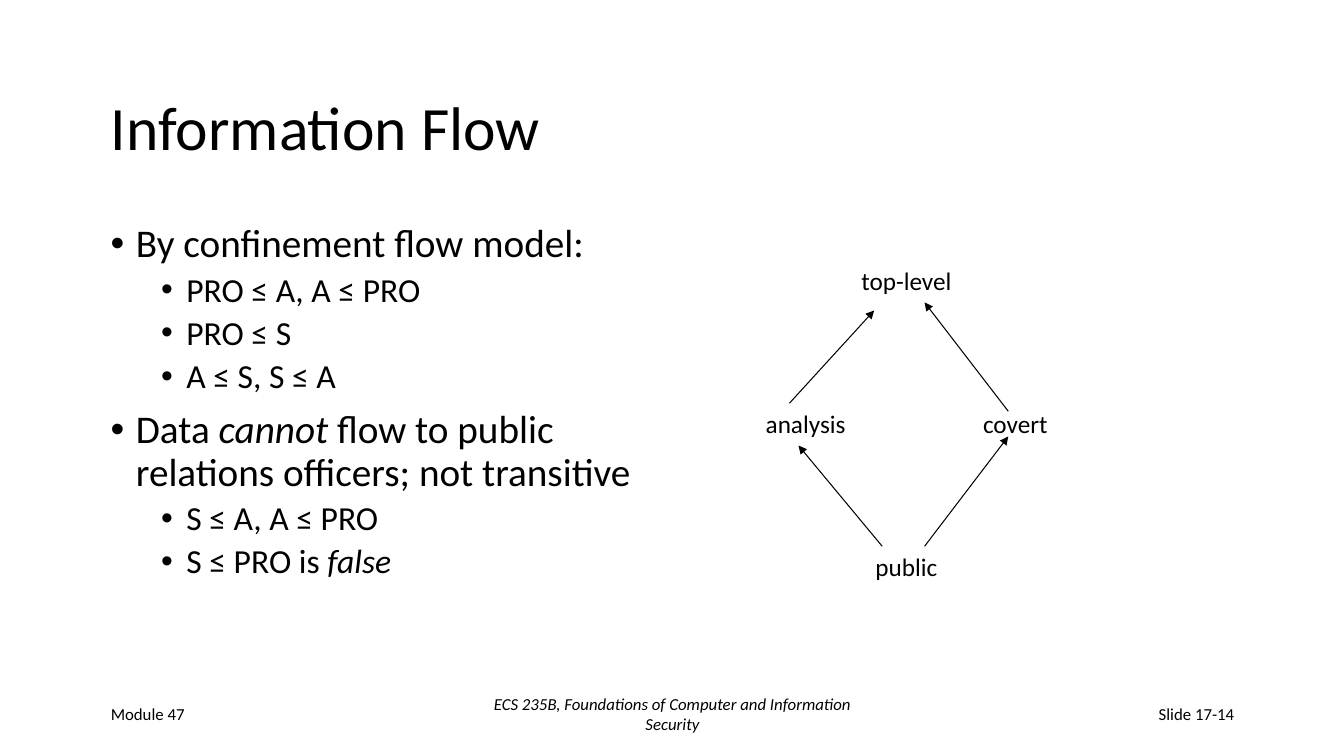
from dataclasses import dataclass

from lxml.etree import SubElement
from pptx import Presentation
from pptx.dml.color import RGBColor
from pptx.enum.shapes import MSO_CONNECTOR
from pptx.enum.text import MSO_ANCHOR, MSO_AUTO_SIZE, PP_ALIGN
from pptx.oxml.ns import qn
from pptx.slide import Slide
from pptx.text.text import TextFrame, _Paragraph
from pptx.util import Inches, Pt


@dataclass(frozen=True)
class Theme:
    font: str = "Calibri"
    ink: RGBColor = RGBColor(0, 0, 0)
    background: RGBColor = RGBColor(255, 255, 255)
    title: int = 44
    points: tuple[int, int] = (28, 24)
    node: int = 18
    footer: int = 12
    arrow: float = 0.75


@dataclass(frozen=True)
class Point:
    level: int
    text: str
    emphasis: str = ""
    rest: str = ""


@dataclass(frozen=True)
class Label:
    text: str
    left: float
    top: float
    width: float
    height: float
    size: int
    align: PP_ALIGN = PP_ALIGN.CENTER
    anchor: MSO_ANCHOR = MSO_ANCHOR.TOP
    italic: bool = False


@dataclass(frozen=True)
class Flow:
    start: tuple[float, float]
    end: tuple[float, float]


THEME = Theme()

POINTS = [
    Point(0, "By confinement flow model:"),
    Point(1, "PRO ≤ A, A ≤ PRO"),
    Point(1, "PRO ≤ S"),
    Point(1, "A ≤ S, S ≤ A"),
    Point(0, "Data ", "cannot", " flow to public relations officers; not transitive"),
    Point(1, "S ≤ A, A ≤ PRO"),
    Point(1, "S ≤ PRO is ", "false"),
]

NODES = [
    Label(name, left, top, 1.48, 0.4, THEME.node)
    for name, left, top in [
        ("top-level", 8.25, 2.58),
        ("analysis", 7.25, 4),
        ("covert", 9.33, 4),
        ("public", 8.25, 5.42),
    ]
]

FLOWS = [
    Flow((8.75, 5.42), (7.92, 4.42)),
    Flow((9.17, 5.42), (10, 4.33)),
    Flow((7.83, 4), (8.67, 3.08)),
    Flow((10, 4.08), (9.17, 3)),
]

FOOTERS = [
    Label(text, left, 6.83, width, 0.5, THEME.footer, align, MSO_ANCHOR.MIDDLE, italic)
    for text, left, width, align, italic in [
        ("Module 47", 1, 2.78, PP_ALIGN.LEFT, False),
        ("ECS 235B, Foundations of Computer and Information Security",
         4.56, 4.22, PP_ALIGN.CENTER, True),
        ("Slide 17-14", 9.56, 2.78, PP_ALIGN.RIGHT, False),
    ]
]


def format_runs(paragraph: _Paragraph, size: int, italic: bool = False) -> None:
    for run in paragraph.runs:
        run.font.name = THEME.font
        run.font.size = Pt(size)
        run.font.color.rgb = THEME.ink
        run.font.italic = italic


def add_frame(slide: Slide, left: float, top: float, width: float, height: float) -> TextFrame:
    frame = slide.shapes.add_textbox(
        Inches(left), Inches(top), Inches(width), Inches(height)
    ).text_frame
    frame.word_wrap = True
    return frame


def set_title(slide: Slide, text: str) -> None:
    title = slide.shapes.title
    title.left, title.top = Inches(1), Inches(0.67)
    title.width, title.height = Inches(11.33), Inches(1.25)
    frame = title.text_frame
    frame.text = text
    frame.auto_size = MSO_AUTO_SIZE.NONE
    frame.vertical_anchor = MSO_ANCHOR.MIDDLE
    heading = frame.paragraphs[0]
    heading.alignment = PP_ALIGN.LEFT
    heading.line_spacing = 0.9
    format_runs(heading, THEME.title)


def add_bullet(paragraph: _Paragraph, level: int) -> None:
    properties = paragraph._p.get_or_add_pPr()
    properties.set("marL", str(Inches(0.25 + 0.5 * level)))
    properties.set("indent", str(Inches(-0.25)))
    SubElement(properties, qn("a:buFont"), typeface="Arial")
    SubElement(properties, qn("a:buChar"), char="•")


def add_points(slide: Slide, points: list[Point]) -> None:
    frame = add_frame(slide, 1, 2.17, 5.56, 4.5)
    for index, point in enumerate(points):
        paragraph = frame.add_paragraph() if index else frame.paragraphs[0]
        paragraph.level = point.level
        paragraph.line_spacing = 0.9
        paragraph.space_before = Pt(5 if point.level else 10)
        add_bullet(paragraph, point.level)
        for part in filter(None, (point.text, point.emphasis, point.rest)):
            paragraph.add_run().text = part
        format_runs(paragraph, THEME.points[point.level])
        if point.emphasis:
            paragraph.runs[1].font.italic = True


def add_label(slide: Slide, label: Label) -> None:
    frame = add_frame(slide, label.left, label.top, label.width, label.height)
    frame.text = label.text
    frame.vertical_anchor = label.anchor
    paragraph = frame.paragraphs[0]
    paragraph.alignment = label.align
    format_runs(paragraph, label.size, label.italic)


def add_flow(slide: Slide, flow: Flow) -> None:
    arrow = slide.shapes.add_connector(
        MSO_CONNECTOR.STRAIGHT, *map(Inches, flow.start + flow.end)
    )
    arrow.line.color.rgb = THEME.ink
    arrow.line.width = Pt(THEME.arrow)
    SubElement(arrow.line._get_or_add_ln(), qn("a:tailEnd"), type="triangle")
    SubElement(arrow._element.spPr, qn("a:effectLst"))


def main() -> None:
    presentation = Presentation()
    presentation.slide_width = Inches(13.33)
    presentation.slide_height = Inches(7.5)
    slide = presentation.slides.add_slide(presentation.slide_layouts.get_by_name("Title Only"))
    slide.background.fill.solid()
    slide.background.fill.fore_color.rgb = THEME.background
    set_title(slide, "Information Flow")
    add_points(slide, POINTS)
    for node in NODES:
        add_label(slide, node)
    for flow in FLOWS:
        add_flow(slide, flow)
    for footer in FOOTERS:
        add_label(slide, footer)
    presentation.save("out.pptx")


if __name__ == "__main__":
    main()
